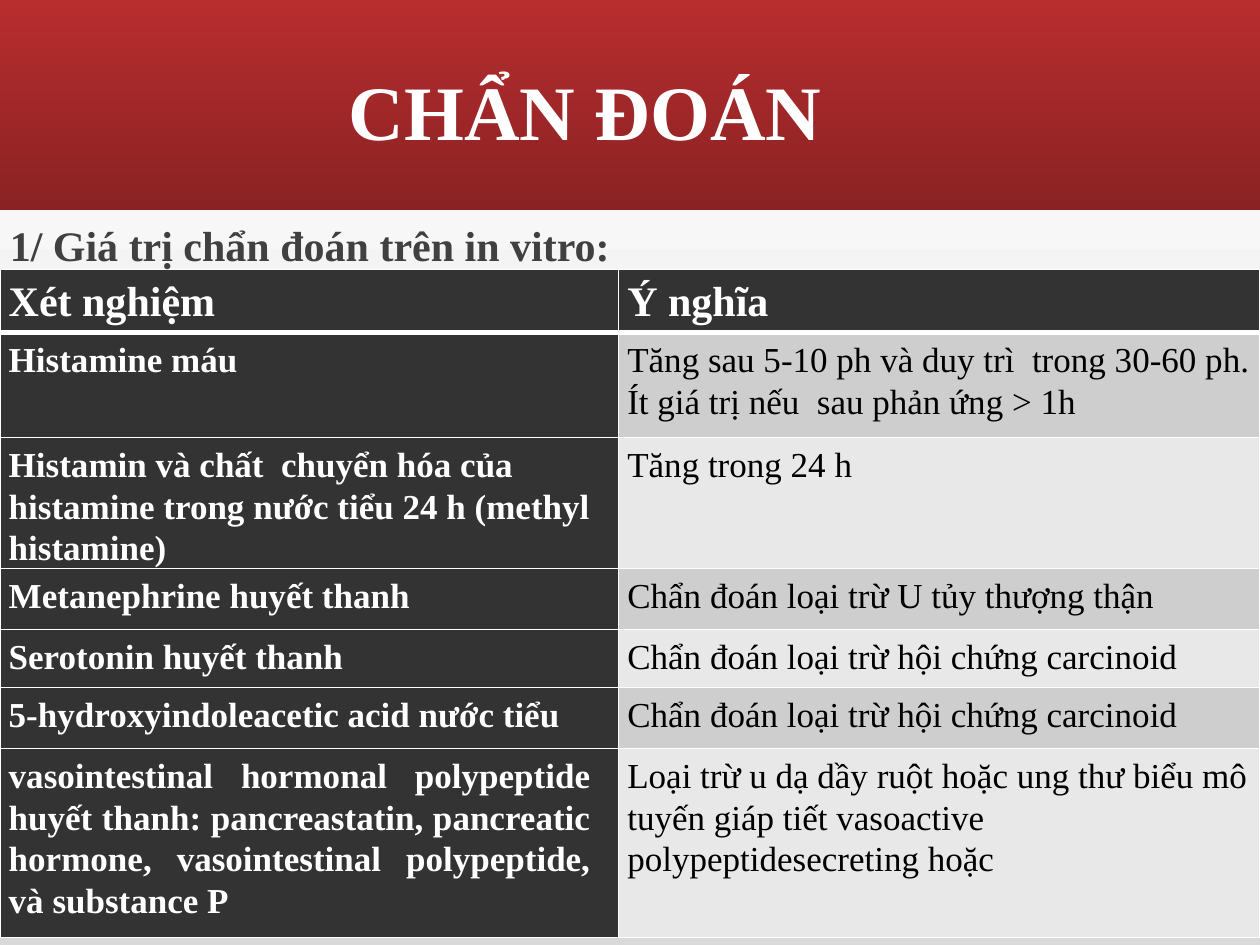
from dataclasses import dataclass

from lxml.etree import SubElement as Sub
from pptx import Presentation
from pptx.dml.color import RGBColor as Rgb
from pptx.enum.shapes import MSO_SHAPE as Kind
from pptx.enum.text import MSO_ANCHOR as Anchor
from pptx.enum.text import MSO_AUTO_SIZE as Auto
from pptx.enum.text import PP_ALIGN as Align
from pptx.oxml.ns import qn
from pptx.util import Pt

FONT = "Times New Roman"
HEX = {
    "white": "FFFFFF",
    "black": "000000",
    "grey": "404040",
    "dark": "333333",
    "mid": "CECECE",
    "pale": "E8E8E8",
    "base": "D9D9D9",
    "red": "B82D2F",
    "wine": "8A2223",
}


@dataclass
class Row:
    test: str
    note: str
    high: float
    just: bool = False


ROWS = [
    Row("Xét nghiệm", "Ý nghĩa", 36),
    Row("Histamine máu",
        "Tăng sau 5-10 ph và duy trì  trong 30-60 ph. Ít giá trị nếu  sau phản ứng > 1h", 60),
    Row("Histamin và chất  chuyển hóa của histamine trong nước tiểu 24 h (methyl histamine)",
        "Tăng trong 24 h", 60),
    Row("Metanephrine huyết thanh", "Chẩn đoán loại trừ U tủy thượng thận", 35),
    Row("Serotonin huyết thanh", "Chẩn đoán loại trừ hội chứng carcinoid", 33),
    Row("5-hydroxyindoleacetic acid nước tiểu", "Chẩn đoán loại trừ hội chứng carcinoid", 35),
    Row("vasointestinal hormonal polypeptide huyết thanh: pancreastatin, "
        "pancreatic hormone, vasointestinal polypeptide, và substance P",
        "Loại trừ u dạ dầy ruột hoặc ung thư biểu mô tuyến giáp tiết vasoactive "
        "polypeptidesecreting hoặc", 108, True),
]
WIDTHS = [353.5, 366.5]


def color(name: str) -> Rgb:
    return Rgb.from_string(HEX[name])


def write(frame, text: str, *, size: float = 20, tint: str = "white", bold: bool = True,
          align=Align.LEFT, lead: float = 1.07, above: float = 0, indent: float = 0) -> None:
    para = frame.paragraphs[0]
    para.alignment = align
    para.line_spacing = lead
    para.space_before = Pt(above)
    if indent:
        prop = para._p.get_or_add_pPr()
        prop.set("marL", str(Pt(indent)))
        prop.set("indent", "0")
    run = para.add_run()
    run.text = text
    font = run.font
    font.name, font.size, font.bold = FONT, Pt(size), bold
    font.color.rgb = color(tint)


def blend(fill, first: str, last: str, angle: float) -> None:
    fill.gradient()
    fill.gradient_angle = angle
    for stop, name in zip(fill.gradient_stops, (first, last)):
        stop.color.rgb = color(name)


def edge(cell, top: float, bottom: float) -> None:
    prop = cell._tc.get_or_add_tcPr()
    for side, width in zip("LRTB", (1, 1, top, bottom)):
        line = Sub(prop, qn(f"a:ln{side}"), w=str(Pt(width)))
        paint = Sub(line, qn("a:solidFill"))
        Sub(paint, qn("a:srgbClr"), val=HEX["white"])


def fill_row(table, num: int, row: Row) -> None:
    table.rows[num].height = Pt(row.high)
    head = num == 0
    for col, text in enumerate((row.test, row.note)):
        cell = table.cell(num, col)
        dark = head or col == 0
        just = row.just and col == 0
        cell.margin_left, cell.margin_top = Pt(5), Pt(3.6)
        cell.margin_right, cell.margin_bottom = Pt(16 if just else 0.7), Pt(0)
        edge(cell, 3 if num == 1 else 1, 3 if head else 1)
        cell.fill.solid()
        cell.fill.fore_color.rgb = color("dark" if dark else "mid" if num % 2 else "pale")
        write(cell.text_frame, text, size=24 if head else 20, bold=dark,
              tint="white" if dark else "black",
              align=Align.JUSTIFY if just else Align.LEFT)


def main() -> None:
    deck = Presentation()
    deck.slide_width, deck.slide_height = Pt(720), Pt(540)
    slide = deck.slides.add_slide(deck.slide_layouts[5])
    shapes = slide.shapes
    blend(slide.background.fill, "base", "white", 90)

    band = shapes.add_shape(Kind.RECTANGLE, Pt(0), Pt(0), Pt(720), Pt(120))
    band.shadow.inherit = False
    band.line.fill.background()
    blend(band.fill, "red", "wine", 270)
    shapes._spTree.insert(2, band._element)

    grid = shapes.add_table(len(ROWS), 2, Pt(0), Pt(154), Pt(720), Pt(367))
    table = grid.table
    for col, width in zip(table.columns, WIDTHS):
        col.width = Pt(width)
    for num, row in enumerate(ROWS):
        fill_row(table, num, row)

    title = shapes.title
    title.left, title.top, title.width, title.height = Pt(84), Pt(-12), Pt(501), Pt(104.4)
    frame = title.text_frame
    frame.vertical_anchor = Anchor.BOTTOM
    frame.margin_left = frame.margin_right = Pt(5)
    frame.margin_top = frame.margin_bottom = Pt(2.7)
    write(frame, "CHẨN ĐOÁN", size=44, align=Align.CENTER, lead=0.9)

    box = shapes.add_textbox(Pt(-18), Pt(120), Pt(384), Pt(36.7))
    box.text_frame.word_wrap = False
    box.text_frame.auto_size = Auto.SHAPE_TO_FIT_TEXT
    write(box.text_frame, "1/ Giá trị chẩn đoán trên in vitro:", size=24, tint="grey",
          above=2, indent=16.5)

    deck.save("out.pptx")


if __name__ == "__main__":
    main()
